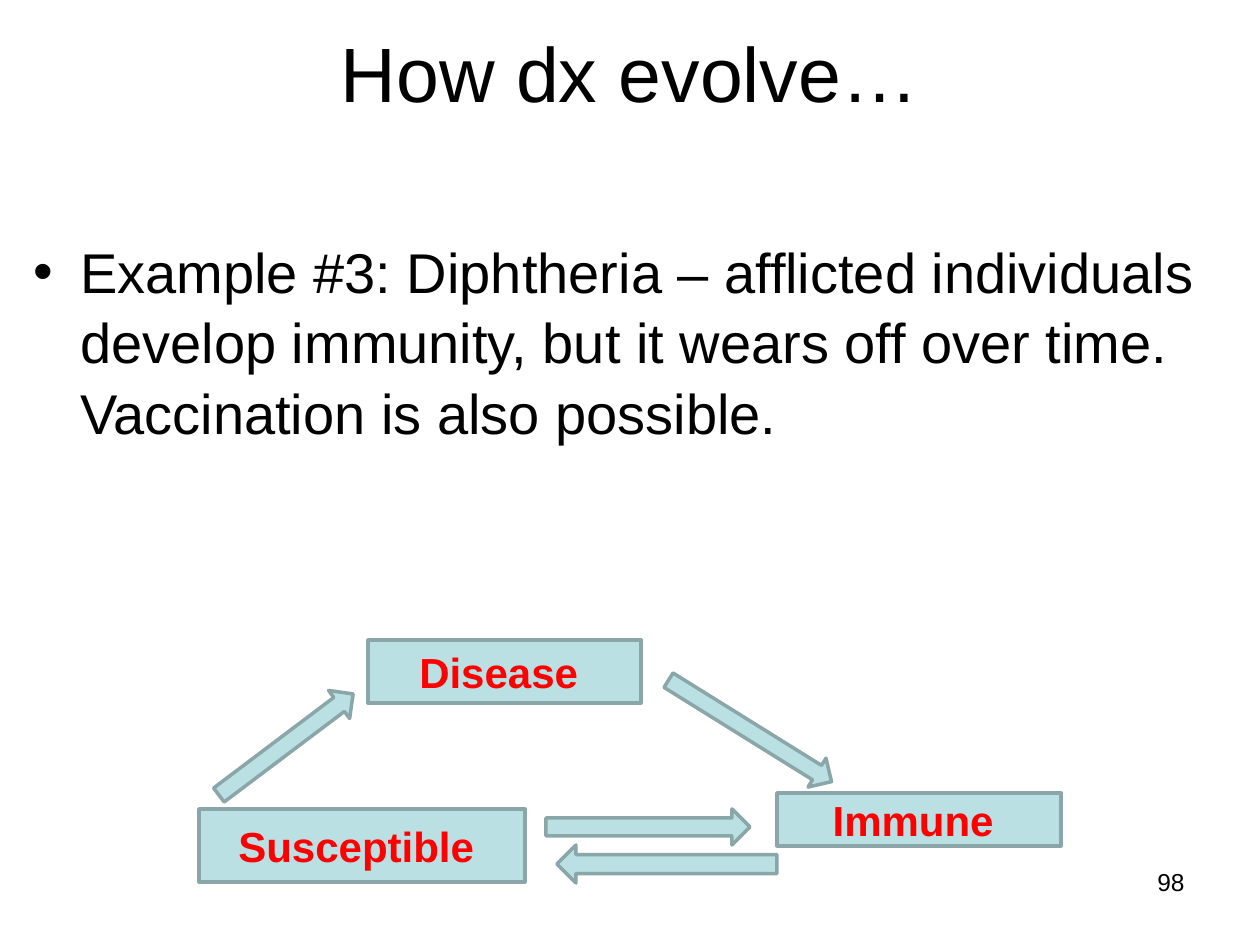
from dataclasses import dataclass

from lxml import etree
from pptx import Presentation
from pptx.dml.color import RGBColor
from pptx.enum.shapes import MSO_SHAPE
from pptx.enum.text import MSO_ANCHOR, PP_ALIGN
from pptx.oxml.ns import qn
from pptx.util import Emu, Pt

PX_PER_INCH = 126


def px(length):
    return Emu(round(length * 914400 / PX_PER_INCH))


@dataclass(frozen=True)
class Theme:
    font: str = "Arial"
    ink: RGBColor = RGBColor(0x00, 0x00, 0x00)
    label: RGBColor = RGBColor(0xFF, 0x00, 0x00)
    fill: RGBColor = RGBColor(0xBB, 0xE0, 0xE3)
    outline: RGBColor = RGBColor(0x8A, 0xA6, 0xA8)
    outline_width: int = 2
    title_size: int = 44
    body_size: int = 32
    label_size: int = 24
    number_size: int = 14


class SlideBuilder:
    def __init__(self, slide, theme):
        self.slide = slide
        self.theme = theme

    def add_words(self, shape, text, size, color, align, bold=False):
        paragraph = shape.text_frame.paragraphs[0]
        paragraph.alignment = align
        run = paragraph.add_run()
        run.text = text
        run.font.color.rgb = color
        font_format = {"name": self.theme.font, "size": Pt(size), "bold": bold}
        for attribute, value in font_format.items():
            setattr(run.font, attribute, value)
        return paragraph

    def text(self, box, text, size, align, **frame_format):
        shape = self.slide.shapes.add_textbox(*map(px, box))
        for attribute, value in {"word_wrap": True, **frame_format}.items():
            setattr(shape.text_frame, attribute, value)
        return self.add_words(shape, text, size, self.theme.ink, align)

    def bullet(self, box, text, indent):
        paragraph = self.text(box, text, self.theme.body_size, PP_ALIGN.LEFT, margin_top=0)
        paragraph.line_spacing = 1.05
        properties = paragraph._p.get_or_add_pPr()
        properties.set("marL", str(px(indent)))
        properties.set("indent", str(-px(indent)))
        etree.SubElement(properties, qn("a:buFont")).set("typeface", self.theme.font)
        etree.SubElement(properties, qn("a:buChar")).set("char", "•")

    def shape(self, kind, box):
        shape = self.slide.shapes.add_shape(kind, *map(px, box))
        shape.shadow.inherit = False
        shape.fill.solid()
        shape.fill.fore_color.rgb = self.theme.fill
        shape.line.color.rgb = self.theme.outline
        shape.line.width = Pt(self.theme.outline_width)
        return shape

    def state(self, box, label):
        shape = self.shape(MSO_SHAPE.RECTANGLE, box)
        shape.text_frame.vertical_anchor = MSO_ANCHOR.MIDDLE
        self.add_words(shape, label, self.theme.label_size, self.theme.label,
                       PP_ALIGN.CENTER, bold=True)

    def arrow(self, box, rotation):
        self.shape(MSO_SHAPE.RIGHT_ARROW, box).rotation = rotation


def main():
    presentation = Presentation()
    presentation.slide_width = px(1260)
    presentation.slide_height = px(945)
    theme = Theme()
    builder = SlideBuilder(presentation.slides.add_slide(presentation.slide_layouts[6]), theme)

    # Title and example
    builder.text((63, 38, 1134, 67), "How dx evolve…", theme.title_size,
                 PP_ALIGN.CENTER, vertical_anchor=MSO_ANCHOR.MIDDLE)
    builder.bullet((21, 234, 1197, 210),
                   "Example #3: Diphtheria – afflicted individuals develop immunity, "
                   "but it wears off over time. Vaccination is also possible.", indent=47)

    # States of the disease cycle; the trailing space nudges each label left
    states = {
        "Disease ": (368, 640, 273, 63),
        "Susceptible ": (199, 809, 326, 73),
        "Immune ": (777, 793, 284, 53),
    }
    for label, box in states.items():
        builder.state(box, label)

    # Transitions between the states
    transitions = [
        ((202, 727, 168, 35), 323),    # susceptible to disease
        ((654, 714, 192, 34), 31.9),   # disease to immune
        ((546, 809, 204, 36), 0),      # susceptible to immune
        ((557, 845, 220, 38), 180),    # immune to susceptible
    ]
    for box, rotation in transitions:
        builder.arrow(box, rotation)

    # Slide number
    builder.text((903, 861, 294, 65), "98", theme.number_size, PP_ALIGN.RIGHT)

    presentation.save("out.pptx")


if __name__ == "__main__":
    main()
